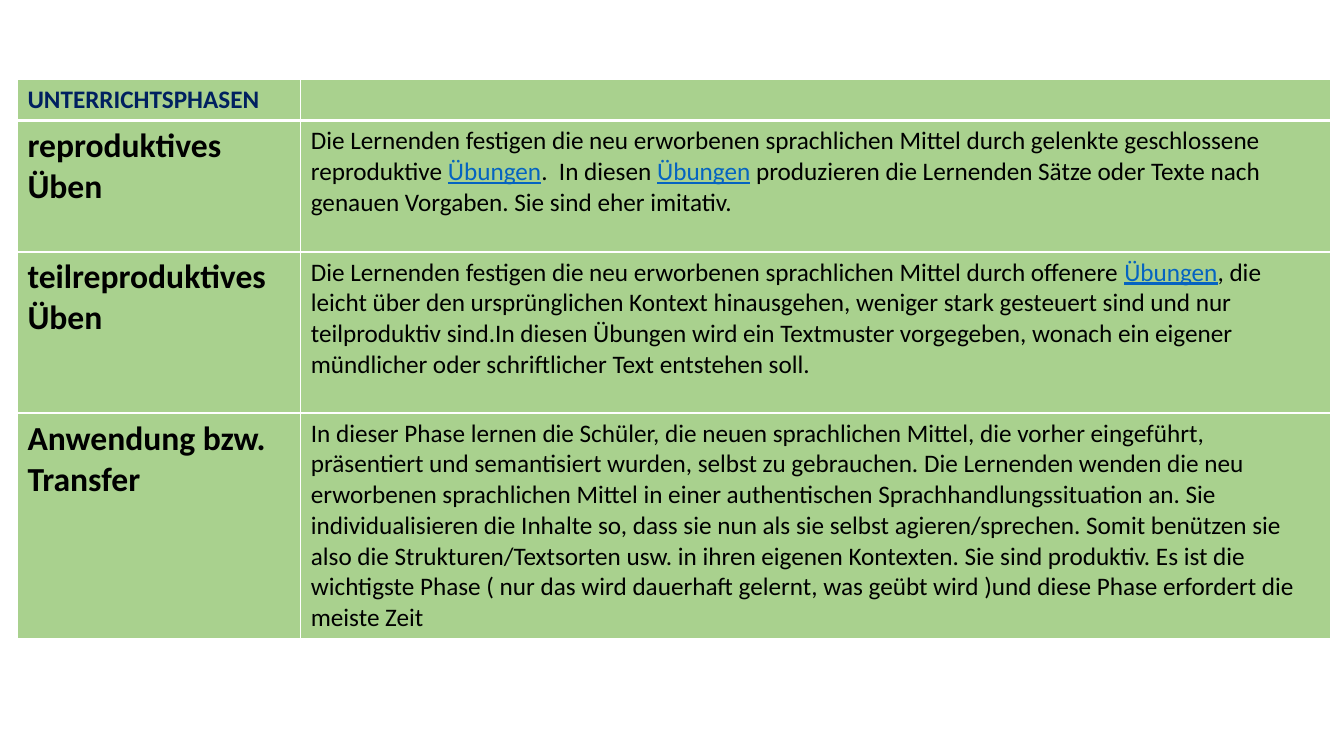
import pptx
import pptx.dml.color
import pptx.oxml
import pptx.oxml.ns
import pptx.util

Cm, Pt = pptx.util.Cm, pptx.util.Pt
RGB = pptx.dml.color.RGBColor.from_string

COLORS = {"cell": "A9D18E", "border": "FFFFFF", "header": "002060",
          "text": "000000", "term": "0563C1"}
FONT = "Calibri"
COL_WIDTHS = [7.14, 25.96]
ROW_HEIGHTS = [1.03, 3.31, 4.06, 5.6]

# Each phase: name, then runs of (text, is underlined term)
PHASES = [
    ("reproduktives Üben", [
        ("Die Lernenden festigen die neu erworbenen sprachlichen Mittel durch "
         "gelenkte geschlossene reproduktive ", False),
        ("Übungen", True),
        (".  In diesen ", False),
        ("Übungen", True),
        (" produzieren die Lernenden Sätze oder Texte nach genauen Vorgaben. "
         "Sie sind eher imitativ.", False)]),
    ("teilreproduktives Üben", [
        ("Die Lernenden festigen die neu erworbenen sprachlichen Mittel durch "
         "offenere ", False),
        ("Übungen", True),
        (", die leicht über den ursprünglichen Kontext hinausgehen, weniger "
         "stark gesteuert sind und nur teilproduktiv sind.In diesen Übungen "
         "wird ein Textmuster vorgegeben, wonach ein eigener mündlicher oder "
         "schriftlicher Text entstehen soll.", False)]),
    ("Anwendung bzw. Transfer", [
        ("In dieser Phase lernen die Schüler, die neuen sprachlichen Mittel, "
         "die vorher eingeführt, präsentiert und semantisiert wurden, selbst "
         "zu gebrauchen. Die Lernenden wenden die neu erworbenen sprachlichen "
         "Mittel in einer authentischen Sprachhandlungssituation an. Sie "
         "individualisieren die Inhalte so, dass sie nun als sie selbst "
         "agieren/sprechen. Somit benützen sie also die Strukturen/Textsorten "
         "usw. in ihren eigenen Kontexten. Sie sind produktiv. Es ist die "
         "wichtigste Phase ( nur das wird dauerhaft gelernt, was geübt wird )"
         "und diese Phase erfordert die meiste Zeit", False)]),
]


def add_run(cell, text, size, color, bold=False, underline=False):
    r = cell.text_frame.paragraphs[0].add_run()
    r.text = text
    r.font.name = FONT
    r.font.size = Pt(size)
    r.font.bold = bold
    r.font.underline = underline
    r.font.color.rgb = RGB(COLORS[color])


def style_cell(cell, top, bottom):
    cell.fill.solid()
    cell.fill.fore_color.rgb = RGB(COLORS["cell"])
    # Border lines come before the fill in the cell properties
    tcPr = cell._tc.get_or_add_tcPr()
    sides = [("lnL", 1), ("lnR", 1), ("lnT", top), ("lnB", bottom)]
    for i, (side, width) in enumerate(sides):
        tcPr.insert(i, pptx.oxml.parse_xml(
            f'<a:{side} {pptx.oxml.ns.nsdecls("a")} w="{Pt(width)}">'
            f'<a:solidFill><a:srgbClr val="{COLORS["border"]}"/></a:solidFill>'
            f'</a:{side}>'))


def add_phase_table(s, left, top):
    table = s.shapes.add_table(
        len(ROW_HEIGHTS), len(COL_WIDTHS), left, top,
        Cm(sum(COL_WIDTHS)), Cm(sum(ROW_HEIGHTS))).table
    for col, width in zip(table.columns, COL_WIDTHS):
        col.width = Cm(width)

    # Cell fills and borders, with a thick line under the header
    for i, (row, height) in enumerate(zip(table.rows, ROW_HEIGHTS)):
        row.height = Cm(height)
        for cell in row.cells:
            style_cell(cell, 3 if i == 1 else 1, 3 if i == 0 else 1)

    # Header and phases
    add_run(table.cell(0, 0), "UNTERRICHTSPHASEN", 18, "header", bold=True)
    for i, (name, runs) in enumerate(PHASES, start=1):
        add_run(table.cell(i, 0), name, 24, "text", bold=True)
        for text, is_term in runs:
            add_run(table.cell(i, 1), text, 18,
                    "term" if is_term else "text", underline=is_term)


def main():
    prs = pptx.Presentation()
    prs.slide_width, prs.slide_height = Cm(33.87), Cm(19.05)
    s = prs.slides.add_slide(prs.slide_layouts[6])
    add_phase_table(s, Cm(0.44), Cm(2.01))
    prs.save("out.pptx")


if __name__ == "__main__":
    main()
